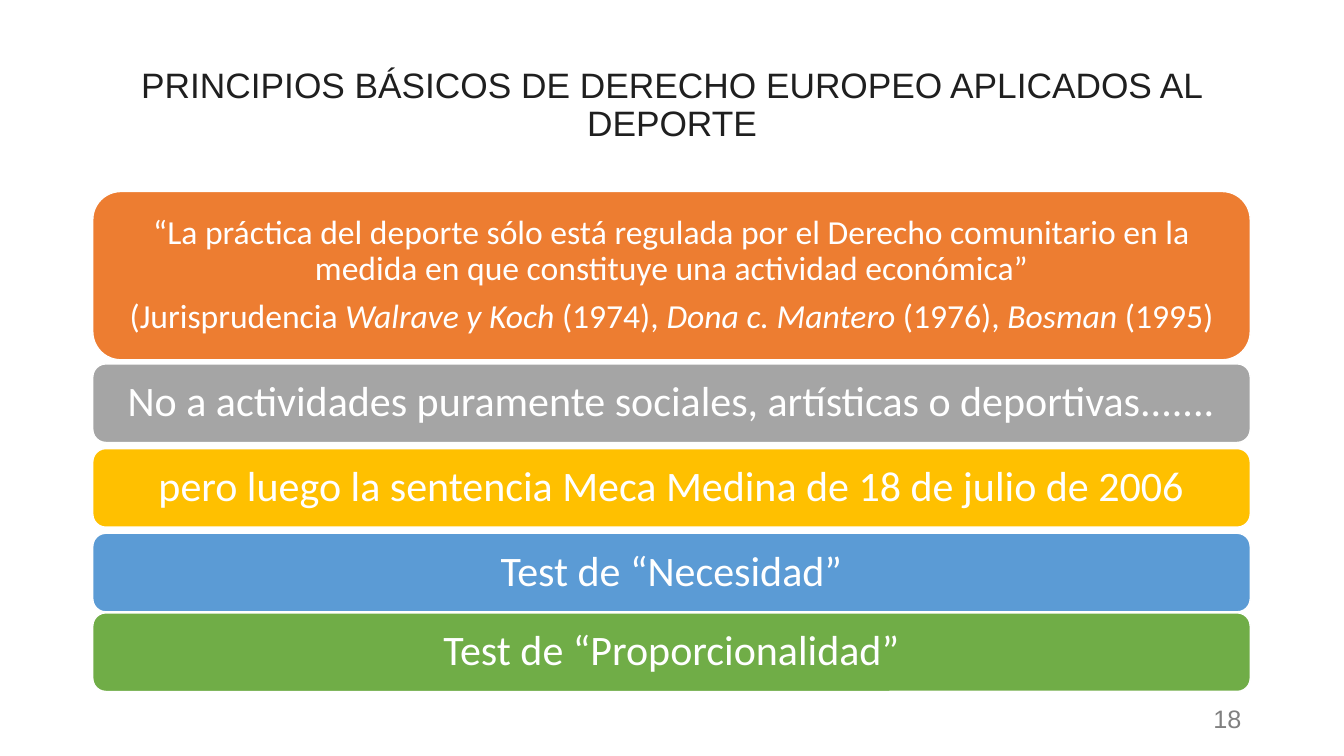
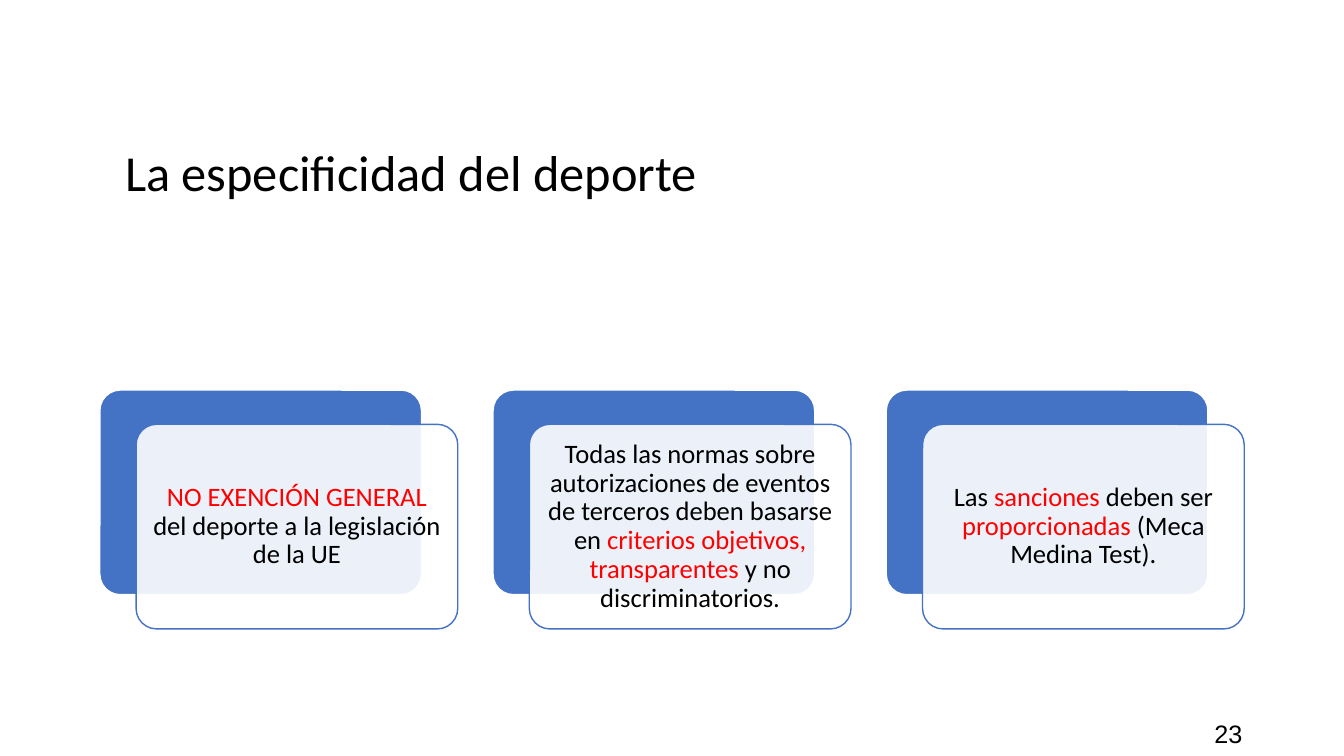
from dataclasses import dataclass

from lxml import etree
from pptx import Presentation
from pptx import util as u
from pptx.dml.color import RGBColor
from pptx.enum import shapes, text
from pptx.oxml.ns import qn


@dataclass(frozen=True)
class Theme:
    body_font: str = "Calibri"
    plain_font: str = "Arial"
    white: str = "FFFFFF"
    black: str = "000000"
    charcoal: str = "1F1F1F"
    gray: str = "808080"
    red: str = "FF0000"
    blue: str = "4472C4"
    bars: tuple = ("ED7D31", "A5A5A5", "FFC000", "5B9BD5", "70AD47")
    caps_title: float = 25.2
    title: float = 36
    quote: float = 24
    bar: float = 30
    card: float = 19
    number: float = 18


theme = Theme()
centered = text.PP_ALIGN.CENTER


def write(shape, paragraphs, size, color, font=theme.body_font, align=centered, margins=(0.1, 0.05)):
    """Each paragraph is a list of (words, colour or None, italic) runs."""
    frame = shape.text_frame
    frame.word_wrap = True
    frame.auto_size = text.MSO_AUTO_SIZE.NONE
    frame.vertical_anchor = text.MSO_ANCHOR.MIDDLE
    frame.margin_left = frame.margin_right = u.Inches(margins[0])
    frame.margin_top = frame.margin_bottom = u.Inches(margins[1])
    for index, runs in enumerate(paragraphs):
        paragraph = frame.add_paragraph() if index else frame.paragraphs[0]
        paragraph.alignment = align
        paragraph.line_spacing = 0.9
        if index:
            paragraph.space_before = u.Pt(8.4)
        for words, run_color, italic in runs:
            run = paragraph.add_run()
            run.text = words
            run.font.name = font
            run.font.size = u.Pt(size)
            run.font.italic = italic
            run.font.color.rgb = RGBColor.from_string(run_color or color)


def rounded(slide, box, fill, line):
    shape = slide.shapes.add_shape(shapes.MSO_SHAPE.ROUNDED_RECTANGLE, *map(u.Inches, box))
    shape.shadow.inherit = False
    shape.fill.solid()
    shape.fill.fore_color.rgb = RGBColor.from_string(fill)
    shape.line.color.rgb = RGBColor.from_string(line)
    shape.line.width = u.Pt(1)
    return shape


presentation = Presentation()
presentation.slide_width = u.Inches(13.33)
presentation.slide_height = u.Inches(7.5)

# Titles and slide numbers
headings = [
    ("PRINCIPIOS BÁSICOS DE DERECHO EUROPEO APLICADOS AL DEPORTE", (0.92, 0.46, 11.49, 1.18),
     theme.caps_title, theme.charcoal, theme.plain_font, centered,
     "18", (9.53, 6.95, 2.88, 0.4), theme.gray),
    ("La especificidad del deporte", (1.14, 0.89, 11.13, 1.7),
     theme.title, theme.black, theme.body_font, text.PP_ALIGN.LEFT,
     "23", (9.42, 7.1, 3, 0.4), theme.black),
]
for words, box, size, color, font, align, number, number_box, number_color in headings:
    slide = presentation.slides.add_slide(presentation.slide_layouts[5])
    title = slide.shapes.title
    title.left, title.top, title.width, title.height = map(u.Inches, box)
    write(title, [[(words, None, False)]], size, color, font, align)
    number_text = slide.shapes.add_textbox(*map(u.Inches, number_box))
    write(number_text, [[(number, None, False)]], theme.number, number_color,
          theme.plain_font, text.PP_ALIGN.RIGHT)
principles, specificity = presentation.slides

# Slide 1: stacked bars, the first one holding the quotation
quote = [
    [("“La práctica del deporte sólo está regulada por el Derecho comunitario en la medida "
      "en que constituye una actividad económica”", None, False)],
    [("(Jurisprudencia ", None, False), ("Walrave y Koch ", None, True),
     ("(1974), ", None, False), ("Dona c. Mantero ", None, True),
     ("(1976), ", None, False), ("Bosman", None, True), (" (1995)", None, False)],
]
bars = [
    (1.9, 1.67, quote, theme.quote, (0.1, 0.05)),
]
for top, words in [
    (3.61, "No a actividades puramente sociales, artísticas o deportivas......."),
    (4.45, "pero luego la sentencia Meca Medina de 18 de julio de 2006"),
    (5.29, "Test de “Necesidad”"),
    (6.08, "Test de “Proporcionalidad”"),
]:
    bars.append((top, 0.78, [[(words, None, False)]], theme.bar, (0.12, 0.06)))
for (top, height, paragraphs, size, margins), fill in zip(bars, theme.bars):
    bar = rounded(principles, (0.92, top, 11.48, height), fill, theme.white)
    write(bar, paragraphs, size, theme.white, margins=margins)

# Slide 2: three cards, each a translucent panel over a blue one
cards = [
    [("NO EXENCIÓN GENERAL ", theme.red, False),
     ("del deporte a la legislación de la UE", None, False)],
    [("Todas las normas sobre autorizaciones de eventos de terceros deben basarse en ", None, False),
     ("criterios objetivos, transparentes", theme.red, False),
     (" y no discriminatorios.", None, False)],
    [("Las ", None, False), ("sanciones", theme.red, False), (" deben ser ", None, False),
     ("proporcionadas ", theme.red, False), ("(Meca Medina Test).", None, False)],
]
card_width, card_height, card_step = 3.19, 2.03, 3.9
for column, runs in enumerate(cards):
    left = 0.99 + column * card_step
    back = rounded(specificity, (left, 3.87, card_width, card_height), theme.blue, theme.white)
    front = rounded(specificity, (left + 0.36, 4.21, card_width, card_height), theme.white, theme.blue)
    back.adjustments[0] = front.adjustments[0] = 0.1
    fill_color = front._element.spPr.find(qn("a:solidFill")).find(qn("a:srgbClr"))
    etree.SubElement(fill_color, qn("a:alpha")).set("val", "90000")
    write(front, [runs], theme.card, theme.black, margins=(0.08, 0.08))

presentation.save("out.pptx")
